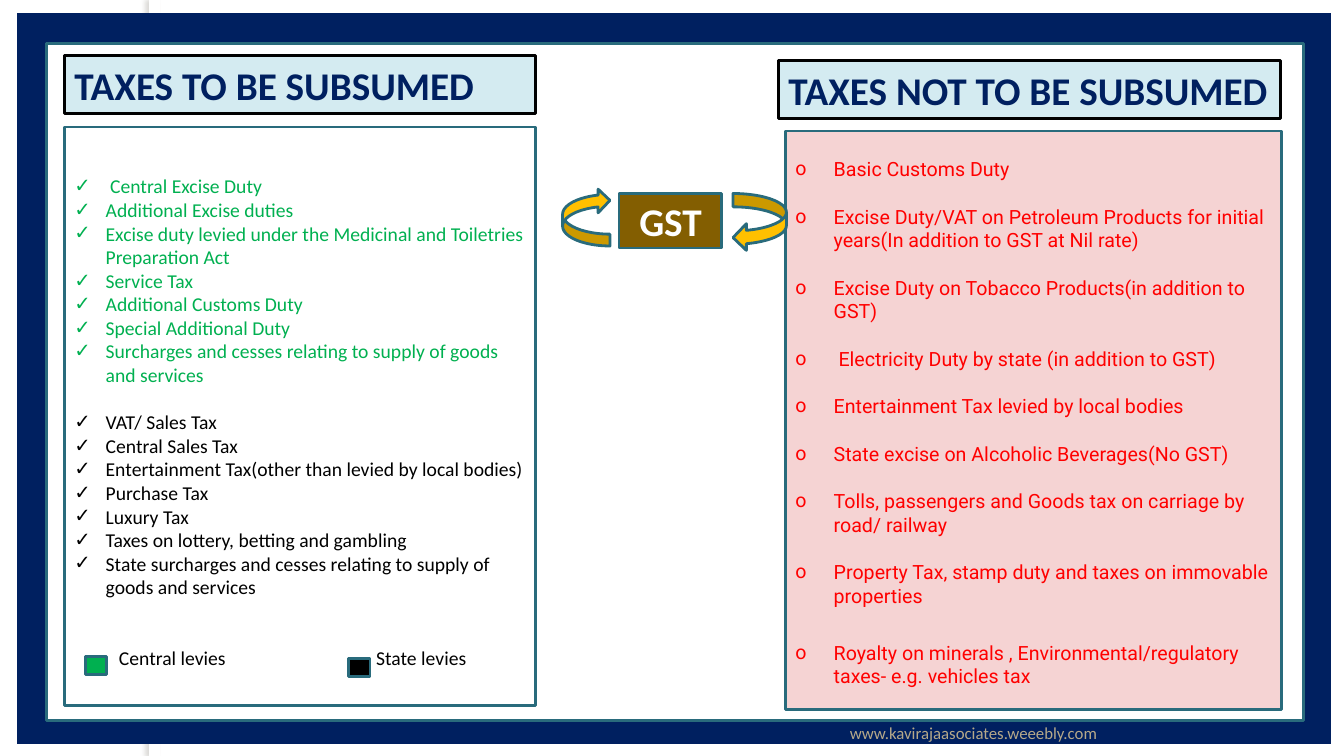
"""Build a slide comparing taxes subsumed and not subsumed by GST."""
from dataclasses import dataclass

from lxml import etree
from pptx import Presentation
from pptx import util as u
from pptx.dml.color import RGBColor
from pptx.enum import shapes, text
from pptx.oxml import ns

CENTRAL = [
    " Central Excise Duty",
    "Additional Excise duties",
    "Excise duty levied under the Medicinal and Toiletries Preparation Act",
    "Service Tax",
    "Additional Customs Duty",
    "Special Additional Duty",
    "Surcharges and cesses relating to supply of goods and services",
]
STATE = [
    "VAT/ Sales Tax",
    "Central Sales Tax",
    "Entertainment Tax(other than levied by local bodies)",
    "Purchase Tax",
    "Luxury Tax",
    "Taxes on lottery, betting and gambling",
    "State surcharges and cesses relating to supply of goods and services",
]
EXCLUDED = [
    "Basic Customs Duty",
    "Excise Duty/VAT on Petroleum Products for initial years(In addition to GST at Nil rate)",
    "Excise Duty on Tobacco Products(in addition to GST)",
    " Electricity Duty by state (in addition to GST)",
    "Entertainment Tax levied by local bodies",
    "State excise on Alcoholic Beverages(No GST)",
    "Tolls, passengers and Goods tax on carriage by road/ railway",
    "Property Tax, stamp duty and taxes on immovable properties",
    "Royalty on minerals , Environmental/regulatory taxes- e.g. vehicles tax",
]


@dataclass(frozen=True)
class Theme:
    navy: str = "002060"
    teal: str = "296B7C"
    white: str = "FFFFFF"
    black: str = "000000"
    heading: str = "D4EBF1"
    pink: str = "F5D3D3"
    green: str = "00B050"
    red: str = "FF0000"
    gold: str = "FFC000"
    brown: str = "835E01"
    footer: str = "B6A98A"
    shade: str = "736F63"
    font: str = "Calibri"
    list_font: str = "Roboto"
    title_size: int = 28
    body_size: int = 14
    footer_size: int = 12
    left_pitch: float = 16.85
    right_gap: float = 17.1
    last_gap: float = 24


THEME = Theme()
PX = 9144
HEADINGS = [
    ("TAXES TO BE SUBSUMED", (64, 55, 467, 58)),
    ("TAXES NOT TO BE SUBSUMED", (772, 60, 498, 58)),
]
ARROWS = [((553, 192, 57, 47), 270), ((725, 194, 57, 53), 90)]
LEGEND = [
    ("Central levies", THEME.green, (85, 651, 21, 18), 118),
    ("State levies", THEME.black, (346, 653, 21, 18), 373),
]
PRESET = shapes.MSO_SHAPE
MIDDLE = text.MSO_ANCHOR.MIDDLE

deck = Presentation()
deck.slide_width, deck.slide_height = 1333 * PX, 750 * PX
page = deck.slides.add_slide(deck.slide_layouts[6])


def place(at):
    return [value * PX for value in at]


def add_box(at, fill, line=None, kind=PRESET.RECTANGLE):
    box = page.shapes.add_shape(kind, *place(at))
    box.shadow.inherit = False
    box.fill.solid()
    box.fill.fore_color.rgb = RGBColor.from_string(fill)
    if line:
        box.line.color.rgb = RGBColor.from_string(line)
        box.line.width = u.Pt(2)
    else:
        box.line.fill.background()
    return box


def write(para, words, color, size, font=THEME.font, bold=False):
    span = para.add_run()
    span.text = words
    span.font.name, span.font.size, span.font.bold = font, u.Pt(size), bold
    span.font.color.rgb = RGBColor.from_string(color)


def open_frame(box, anchor, align=text.PP_ALIGN.LEFT):
    frame = box.text_frame
    frame.word_wrap = True
    frame.vertical_anchor = anchor
    frame.paragraphs[0].alignment = align
    return frame


def add_list(box, rows, top, mark, indent, font, pitch=None):
    frame = open_frame(box, text.MSO_ANCHOR.TOP)
    frame.margin_top = top * PX
    for index, (words, color, gap) in enumerate(rows):
        para = frame.add_paragraph() if index else frame.paragraphs[0]
        para.alignment = text.PP_ALIGN.LEFT
        if gap:
            para.space_before = u.Pt(gap)
        if pitch:
            para.line_spacing = u.Pt(pitch)
        props = para._p.get_or_add_pPr()
        props.set("marL", str(indent * PX))
        props.set("indent", str(-indent * PX))
        etree.SubElement(props, ns.qn("a:buFont")).set("typeface", font)
        etree.SubElement(props, ns.qn("a:buChar")).set("char", mark)
        write(para, words, color, THEME.body_size, font)


def add_side_shadow(box):
    effects = box._element.spPr.find(ns.qn("a:effectLst"))
    shadow = etree.SubElement(effects, ns.qn("a:outerShdw"), blurRad=str(u.Pt(3)),
                              dist=str(u.Pt(3)), dir="10800000", rotWithShape="0")
    tone = etree.SubElement(shadow, ns.qn("a:srgbClr"), val=THEME.shade)
    etree.SubElement(tone, ns.qn("a:alpha"), val="25000")


add_side_shadow(add_box((148, 0, 11, 750), THEME.white))
add_box((17, 13, 1303, 725), THEME.navy)
add_box((46, 43, 1247, 672), THEME.white, THEME.teal)

subsumed = add_box((64, 126, 467, 574), THEME.white, THEME.teal)
rows = [(words, THEME.green, 0) for words in CENTRAL]
rows += [(words, THEME.black, 0 if i else THEME.left_pitch) for i, words in enumerate(STATE)]
add_list(subsumed, rows, 47, "✓", 31, THEME.font, THEME.left_pitch)

excluded = add_box((779, 130, 492, 574), THEME.pink, THEME.teal)
gaps = [0] + [THEME.right_gap] * (len(EXCLUDED) - 2) + [THEME.last_gap]
rows = [(words, THEME.red, gap) for words, gap in zip(EXCLUDED, gaps)]
add_list(excluded, rows, 26, "o", 38, THEME.list_font)

for at, turn in ARROWS:
    add_box(at, THEME.gold, THEME.teal, PRESET.CURVED_DOWN_ARROW).rotation = turn

hub = add_box((614, 192, 102, 54), THEME.brown, THEME.teal)
frame = open_frame(hub, MIDDLE, text.PP_ALIGN.CENTER)
write(frame.paragraphs[0], "GST", THEME.white, THEME.title_size, bold=True)

for words, at in HEADINGS:
    frame = open_frame(add_box(at, THEME.heading, THEME.black), MIDDLE)
    write(frame.paragraphs[0], words, THEME.navy, THEME.title_size, bold=True)

for words, color, at, left in LEGEND:
    add_box(at, color, THEME.teal)
    label = page.shapes.add_textbox(*place((left, 640, 140, 24)))
    frame = open_frame(label, MIDDLE)
    frame.margin_left = frame.margin_right = frame.margin_top = frame.margin_bottom = 0
    write(frame.paragraphs[0], words, THEME.black, THEME.body_size)

footer = page.shapes.add_textbox(*place((833, 690, 422, 52)))
frame = open_frame(footer, text.MSO_ANCHOR.BOTTOM)
write(frame.paragraphs[0], "www.kavirajaasociates.weeebly.com", THEME.footer, THEME.footer_size)

deck.save("out.pptx")
